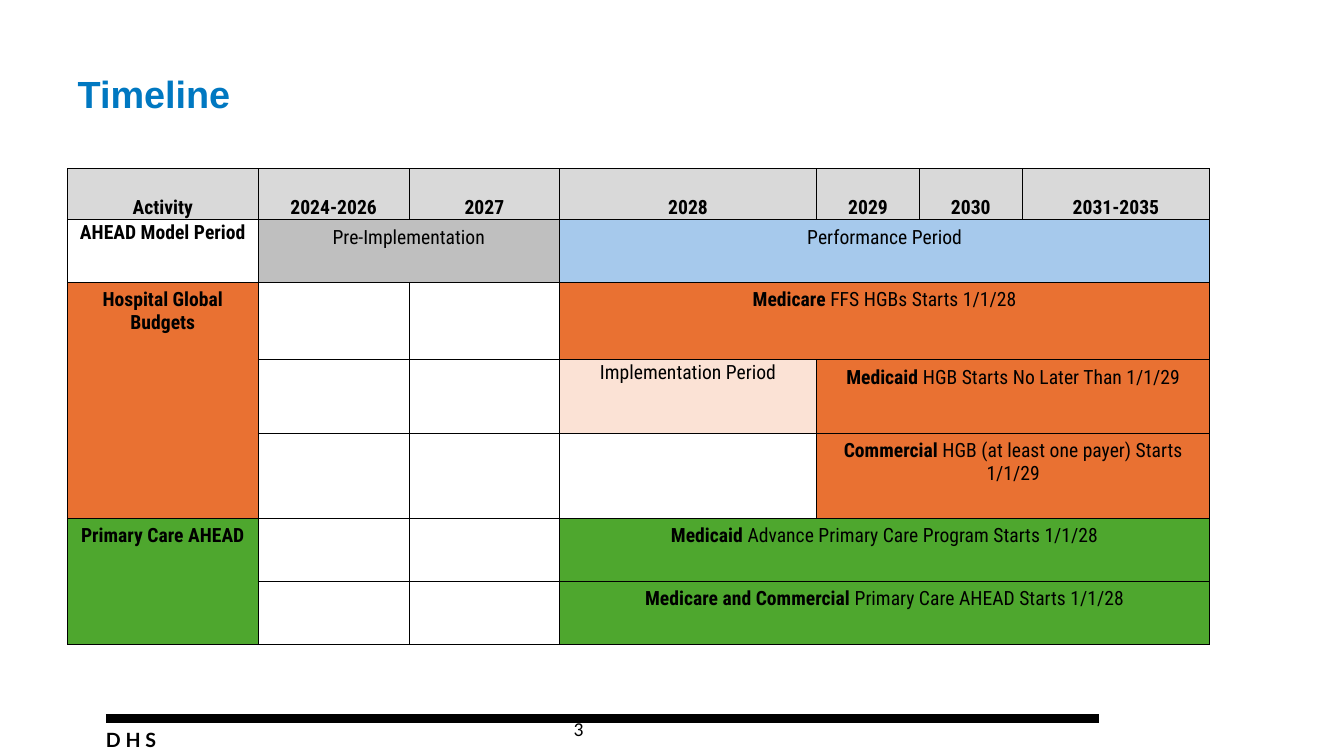
from lxml import etree
from pptx import Presentation
from pptx import util as u
from pptx.dml.color import RGBColor
from pptx.enum import shapes, text
from pptx.oxml.ns import qn

BLACK, GREY, MID_GREY = "000000", "D9D9D9", "BFBFBF"
BLUE, ORANGE, PEACH, GREEN = "A6C9EC", "E97132", "FBE2D5", "4EA72E"
TIGHT = (0.01, 0.01, 0.01, 0)
ROOMY = (0.12, 0.06, 0.12, 0.06)

COLUMNS = [1.89, 1.5, 1.49, 2.55, 1.02, 1.02, 1.86]
ROWS = [0.51, 0.62, 0.77, 0.73, 0.84, 0.63, 0.62]
HEADINGS = ["Activity", "2024-2026", "2027", "2028", "2029", "2030", "2031-2035"]

# row, column, row span, column span, bold text, regular text, fill, margins
PERIODS = [
    (1, 0, 1, 1, "AHEAD Model Period", "", None, TIGHT),
    (1, 1, 1, 2, "", "Pre-Implementation", MID_GREY, ROOMY),
    (1, 3, 1, 4, "", "Performance Period", BLUE, ROOMY),
    (2, 0, 3, 1, "Hospital Global Budgets", "", ORANGE, ROOMY),
    (2, 3, 1, 4, "Medicare", " FFS HGBs Starts 1/1/28", ORANGE, ROOMY),
    (3, 3, 1, 1, "", "Implementation Period", PEACH, TIGHT),
    (3, 4, 1, 3, "Medicaid ", "HGB Starts No Later Than 1/1/29", ORANGE, ROOMY),
    (4, 4, 1, 3, "Commercial", " HGB (at least one payer) Starts 1/1/29", ORANGE, ROOMY),
    (5, 0, 2, 1, "Primary Care AHEAD", "", GREEN, ROOMY),
    (5, 3, 1, 4, "Medicaid ", "Advance Primary Care Program Starts 1/1/28", GREEN, ROOMY),
    (6, 3, 1, 4, "Medicare and Commercial ", "Primary Care AHEAD Starts 1/1/28", GREEN, ROOMY),
]


def rgb(value):
    return RGBColor.from_string(value)


class Deck:
    table_font = "Roboto Condensed"

    def __init__(self):
        self.prs = Presentation()
        self.prs.slide_width, self.prs.slide_height = u.Inches(13.33), u.Inches(7.5)
        self.slide = self.prs.slides.add_slide(self.prs.slide_layouts[5])

    def style(self, font, name, size, color=BLACK, bold=False):
        font.name, font.size, font.bold = name, u.Pt(size), bold
        font.color.rgb = rgb(color)

    def margins(self, item, sides):
        (item.margin_left, item.margin_top,
         item.margin_right, item.margin_bottom) = map(u.Inches, sides)

    def place(self, sp, box):
        sp.left, sp.top, sp.width, sp.height = map(u.Inches, box)

    def title(self, words, box):
        sp = self.slide.shapes.title
        self.place(sp, box)
        tf = sp.text_frame
        tf.text = words
        tf.auto_size = text.MSO_AUTO_SIZE.NONE
        tf.vertical_anchor = text.MSO_ANCHOR.MIDDLE
        p = tf.paragraphs[0]
        p.alignment = text.PP_ALIGN.LEFT
        self.style(p.font, "Arial", 27, "0078C1", True)

    def label(self, words, box, font, sides, bold=False, spacing=1.0):
        sp = self.slide.shapes.add_textbox(*map(u.Inches, box))
        tf = sp.text_frame
        tf.word_wrap = True
        self.margins(tf, sides)
        p = tf.paragraphs[0]
        p.text = words
        p.line_spacing = spacing
        self.style(p.font, font, 14, bold=bold)

    def rule(self, left, right, y, width):
        line = self.slide.shapes.add_connector(
            shapes.MSO_CONNECTOR.STRAIGHT, *map(u.Inches, (left, y, right, y)))
        line.line.color.rgb = rgb(BLACK)
        line.line.width = u.Pt(width)
        etree.SubElement(line._element.spPr, qn("a:effectLst"))

    def borders(self, cell):
        tcPr = cell._tc.get_or_add_tcPr()
        for side in ("lnL", "lnR", "lnT", "lnB"):
            ln = etree.SubElement(tcPr, qn(f"a:{side}"), w=str(u.Pt(0.5)))
            fill = etree.SubElement(ln, qn("a:solidFill"))
            etree.SubElement(fill, qn("a:srgbClr"), val=BLACK)

    def table(self, left, top):
        frame = self.slide.shapes.add_table(
            len(ROWS), len(COLUMNS), u.Inches(left), u.Inches(top),
            u.Inches(sum(COLUMNS)), u.Inches(sum(ROWS)))
        table = frame.table
        table.first_row = table.horz_banding = False
        for column, width in zip(table.columns, COLUMNS):
            column.width = u.Inches(width)
        for row, height in zip(table.rows, ROWS):
            row.height = u.Inches(height)
        for cell in table.iter_cells():
            self.borders(cell)
            cell.fill.background()
        return table

    def cell(self, table, row, col, row_span, col_span, strong, plain, fill, sides):
        cell = table.cell(row, col)
        if row_span * col_span > 1:
            cell.merge(table.cell(row + row_span - 1, col + col_span - 1))
        if fill:
            cell.fill.solid()
            cell.fill.fore_color.rgb = rgb(fill)
        self.margins(cell, sides)
        p = cell.text_frame.paragraphs[0]
        p.alignment = text.PP_ALIGN.CENTER
        self.style(p.font, self.table_font, 14, bold=not plain)
        for words, bold in ((strong, True), (plain, False)):
            if words:
                r = p.add_run()
                r.text = words
                self.style(r.font, self.table_font, 14, bold=bold)
        return cell


def main():
    deck = Deck()
    deck.label("D H S", (1.05, 7.21, 0.76, 0.25), "Lato", (0, 0.01, 0, 0), bold=True)
    deck.rule(1.05, 10.9, 7.13, 6)
    deck.title("Timeline", (0.67, 0.3, 12, 1.25))
    deck.label("3", (5.59, 7.09, 3.11, 0.32), "Calibri", (0.1, 0.05, 0.1, 0.05), spacing=0.9)
    table = deck.table(0.67, 1.67)
    for col, heading in enumerate(HEADINGS):
        cell = deck.cell(table, 0, col, 1, 1, heading, "", GREY, TIGHT)
        cell.vertical_anchor = text.MSO_ANCHOR.BOTTOM
    for period in PERIODS:
        deck.cell(table, *period)
    deck.prs.save("out.pptx")


if __name__ == "__main__":
    main()
